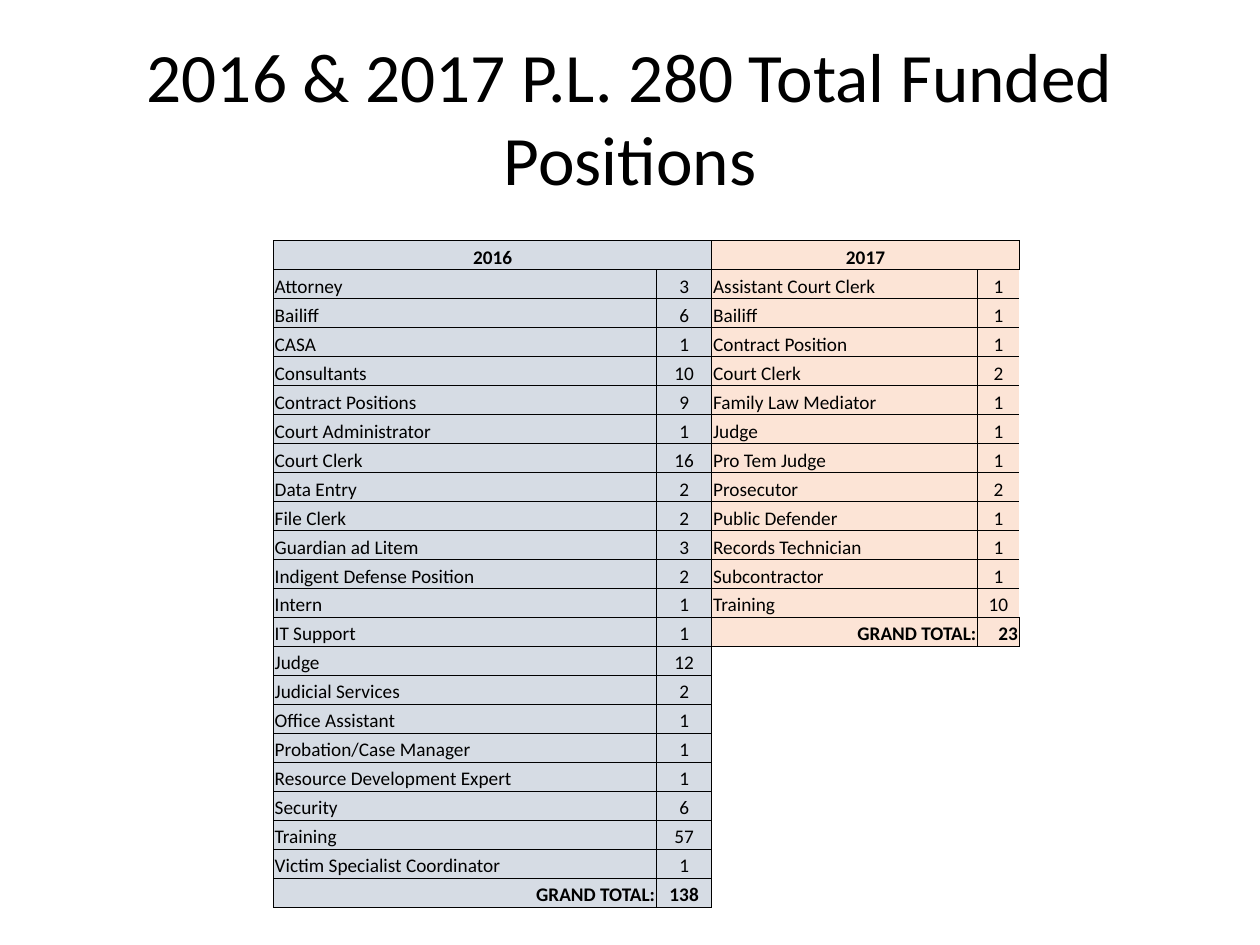
from pptx import Presentation
from pptx.dml import color
from pptx.enum import text
from pptx.oxml import ns
from pptx.util import Inches, Pt
from lxml import etree

BLACK = color.RGBColor(0x00, 0x00, 0x00)
BLUE_GRAY = color.RGBColor(0xD6, 0xDC, 0xE4)
PEACH = color.RGBColor(0xFC, 0xE4, 0xD6)

LEFT, CENTER, RIGHT = text.PP_ALIGN.LEFT, text.PP_ALIGN.CENTER, text.PP_ALIGN.RIGHT
TOTAL = "GRAND TOTAL:"

POSITIONS_2016 = [
    ("Attorney", 3), ("Bailiff", 6), ("CASA", 1), ("Consultants", 10),
    ("Contract Positions", 9), ("Court Administrator", 1), ("Court Clerk", 16),
    ("Data Entry", 2), ("File Clerk", 2), ("Guardian ad Litem", 3),
    ("Indigent Defense Position", 2), ("Intern", 1), ("IT Support", 1),
    ("Judge", 12), ("Judicial Services", 2), ("Office Assistant", 1),
    ("Probation/Case Manager", 1), ("Resource Development Expert", 1),
    ("Security", 6), ("Training", 57), ("Victim Specialist Coordinator", 1),
    (TOTAL, 138),
]
POSITIONS_2017 = [
    ("Assistant Court Clerk", 1), ("Bailiff", 1), ("Contract Position", 1),
    ("Court Clerk", 2), ("Family Law Mediator", 1), ("Judge", 1),
    ("Pro Tem Judge", 1), ("Prosecutor", 2), ("Public Defender", 1),
    ("Records Technician", 1), ("Subcontractor", 1), ("Training", 10),
    (TOTAL, 23),
]


class PositionsSlide:
    font = "Calibri"
    title_size = Pt(39.6)
    cell_size = Pt(11)
    border_width = Pt(0.5)

    def __init__(self, deck):
        self.slide = deck.slides.add_slide(deck.slide_layouts[5])

    def style(self, paragraph, size, align, bold=False):
        paragraph.alignment = align
        for run in paragraph.runs:
            run.font.name = self.font
            run.font.size = size
            run.font.bold = bold
            run.font.color.rgb = BLACK

    def title(self, wording, left, top, width, height):
        title = self.slide.shapes.title
        title.left, title.top = Inches(left), Inches(top)
        title.width, title.height = Inches(width), Inches(height)
        frame = title.text_frame
        frame.word_wrap = True
        frame.auto_size = text.MSO_AUTO_SIZE.NONE
        frame.vertical_anchor = text.MSO_ANCHOR.MIDDLE
        frame.text = wording
        self.style(frame.paragraphs[0], self.title_size, CENTER)

    def table(self, left, top, widths, row_height, row_count):
        frame = self.slide.shapes.add_table(
            row_count, len(widths), Inches(left), Inches(top),
            Inches(sum(widths)), Inches(row_height * row_count))
        table = frame.table
        table.first_row = table.horz_banding = False
        for column, width in zip(table.columns, widths):
            column.width = Inches(width)
        for row in table.rows:
            row.height = Inches(row_height)
        return table

    def borders(self, cell, edges):
        properties = cell._tc.get_or_add_tcPr()
        for position, edge in enumerate("LRTB"):
            line = etree.Element(ns.qn(f"a:ln{edge}"), w=str(self.border_width))
            if edge in edges:
                fill = etree.SubElement(line, ns.qn("a:solidFill"))
                etree.SubElement(fill, ns.qn("a:srgbClr"), val=str(BLACK))
            else:
                etree.SubElement(line, ns.qn("a:noFill"))
            properties.insert(position, line)

    def cell(self, cell, wording="", fill=None, align=LEFT, bold=False, edges="LRTB"):
        cell.margin_left = cell.margin_right = cell.margin_top = Inches(0.01)
        cell.margin_bottom = 0
        cell.vertical_anchor = text.MSO_ANCHOR.BOTTOM
        if fill is None:
            cell.fill.background()
        else:
            cell.fill.solid()
            cell.fill.fore_color.rgb = fill
        paragraph = cell.text_frame.paragraphs[0]
        if wording:
            paragraph.text = wording
            self.style(paragraph, self.cell_size, align, bold)
        else:
            etree.SubElement(paragraph._p, ns.qn("a:endParaRPr"),
                             sz=str(int(self.cell_size.pt * 100)))
        self.borders(cell, edges)

    def year(self, table, column, heading, positions, fill, count_edges, total_align):
        self.cell(table.cell(0, column), heading, fill, CENTER, True)
        self.cell(table.cell(0, column + 1), fill=fill)
        table.cell(0, column).merge(table.cell(0, column + 1))
        for row, (position, count) in enumerate(positions, 1):
            total = position == TOTAL
            self.cell(table.cell(row, column), position, fill,
                      RIGHT if total else LEFT, total)
            self.cell(table.cell(row, column + 1), str(count), fill,
                      total_align if total else CENTER, total,
                      "LRTB" if total else count_edges)
        first_empty = len(positions) + 1
        for row in range(first_empty, len(table.rows)):
            top = "T" if row == first_empty else ""
            self.cell(table.cell(row, column), edges="L" + top)
            self.cell(table.cell(row, column + 1), edges=top)


def main():
    deck = Presentation()
    deck.slide_width, deck.slide_height = Inches(10), Inches(7.5)
    page = PositionsSlide(deck)
    page.title("2016 & 2017 P.L. 280 Total Funded Positions", 0.5, 0.3, 9, 1.25)
    table = page.table(2.17, 1.91, [3.04, 0.44, 2.11, 0.33], 0.23,
                       len(POSITIONS_2016) + 1)
    page.year(table, 0, "2016", POSITIONS_2016, BLUE_GRAY, "LRTB", CENTER)
    page.year(table, 2, "2017", POSITIONS_2017, PEACH, "LTB", RIGHT)
    deck.save("out.pptx")


if __name__ == "__main__":
    main()
